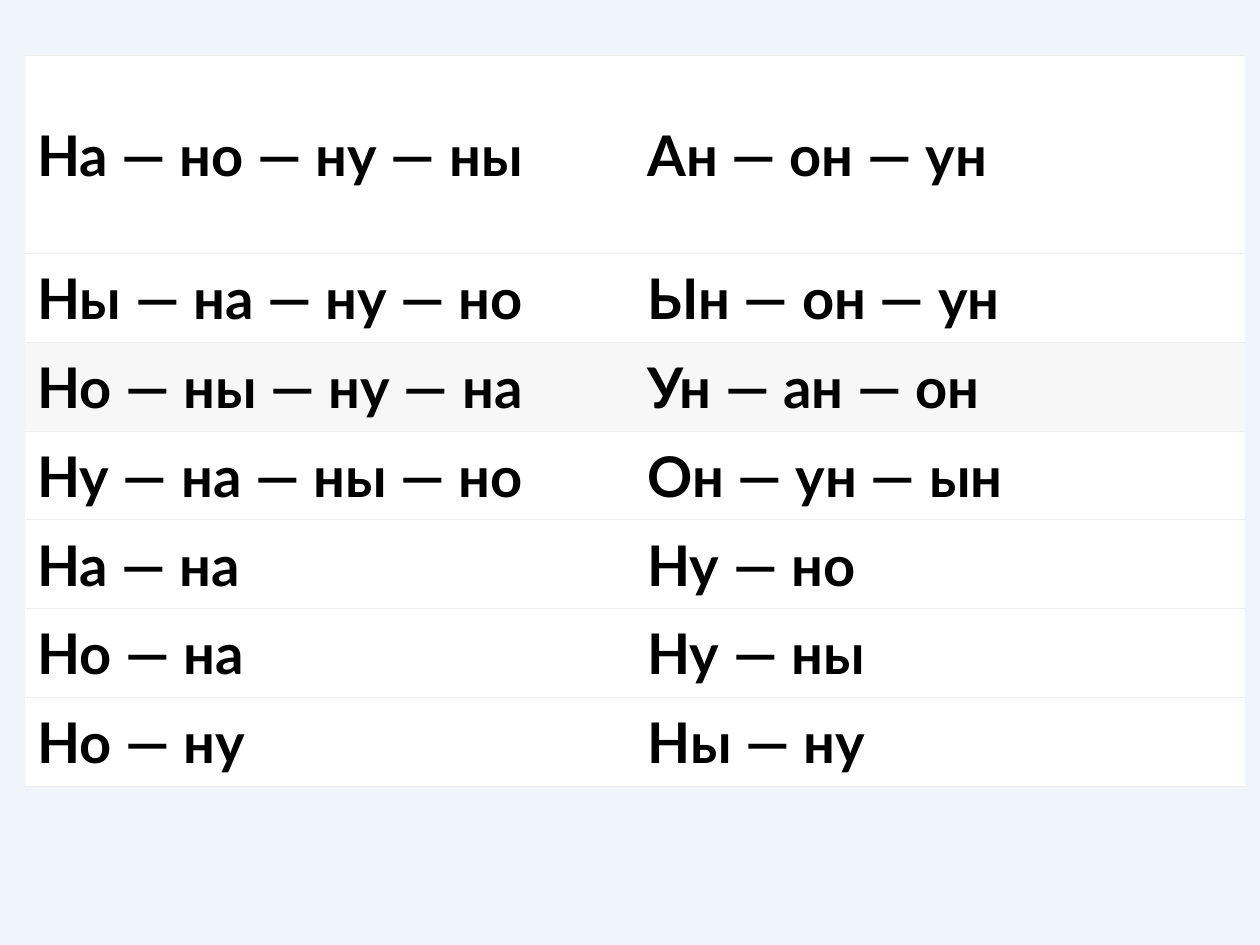
from dataclasses import dataclass
from lxml import etree
from pptx import Presentation
from pptx.dml.color import RGBColor as RGB
from pptx.enum.text import MSO_ANCHOR as Anchor
from pptx.oxml.ns import qn
from pptx.util import Cm, Pt


@dataclass(frozen=True)
class Theme:
    font: str = "Lato"
    size: int = 32
    text: str = "000000"
    background: str = "F0F5FB"
    row: str = "FFFFFF"
    accent_row: str = "F7F7F7"
    rule: str = "EEEEEE"
    rule_width: float = 0.75


def set_borders(cell):
    tc_pr = cell._tc.get_or_add_tcPr()
    for i, side in enumerate(("lnL", "lnR", "lnT", "lnB")):
        ln = etree.Element(qn(f"a:{side}"))
        if side in ("lnT", "lnB"):
            ln.set("w", str(Pt(theme.rule_width)))
            fill = etree.SubElement(ln, qn("a:solidFill"))
            etree.SubElement(fill, qn("a:srgbClr"), val=theme.rule)
        else:
            etree.SubElement(ln, qn("a:noFill"))
        tc_pr.insert(i, ln)


theme = Theme()
syllables = [
    ("На — но — ну — ны", "Ан — он — ун"),
    ("Ны — на — ну — но", "Ын — он — ун"),
    ("Но — ны — ну — на", "Ун — ан — он"),
    ("Ну — на — ны — но", "Он — ун — ын"),
    ("На — на", "Ну — но"),
    ("Но — на", "Ну — ны"),
    ("Но — ну", "Ны — ну"),
]
accent_index = 2
col_width = Cm(12.3)
first_height, row_height = Cm(3.99), Cm(1.79)

prs = Presentation()
prs.slide_width, prs.slide_height = Cm(25.4), Cm(19.05)
s = prs.slides.add_slide(prs.slide_layouts[6])
s.background.fill.solid()
s.background.fill.fore_color.rgb = RGB.from_string(theme.background)

rows, cols = len(syllables), len(syllables[0])
height = first_height + row_height * (rows - 1)
table = s.shapes.add_table(
    rows, cols, Cm(0.5), Cm(1.12), col_width * cols, height
).table
table.first_row = False
table.horz_banding = False
for col in table.columns:
    col.width = col_width

for i, texts in enumerate(syllables):
    table.rows[i].height = row_height if i else first_height
    color = theme.accent_row if i == accent_index else theme.row
    for j, text in enumerate(texts):
        cell = table.cell(i, j)
        cell.vertical_anchor = Anchor.MIDDLE
        cell.margin_left = cell.margin_right = Cm(0.25)
        cell.margin_top = cell.margin_bottom = Cm(0.1)
        cell.fill.solid()
        cell.fill.fore_color.rgb = RGB.from_string(color)
        set_borders(cell)
        r = cell.text_frame.paragraphs[0].add_run()
        r.text = text
        r.font.name = theme.font
        r.font.size = Pt(theme.size)
        r.font.bold = True
        r.font.color.rgb = RGB.from_string(theme.text)

prs.save("out.pptx")
